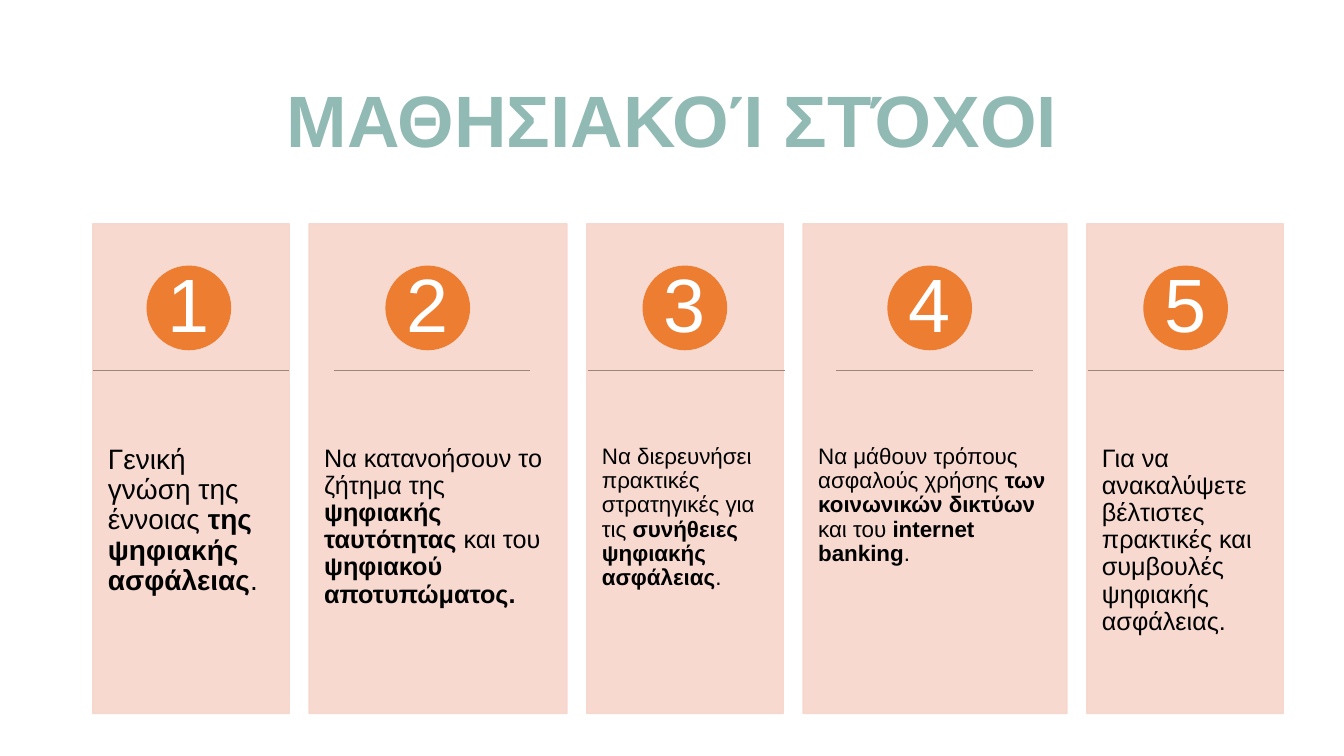
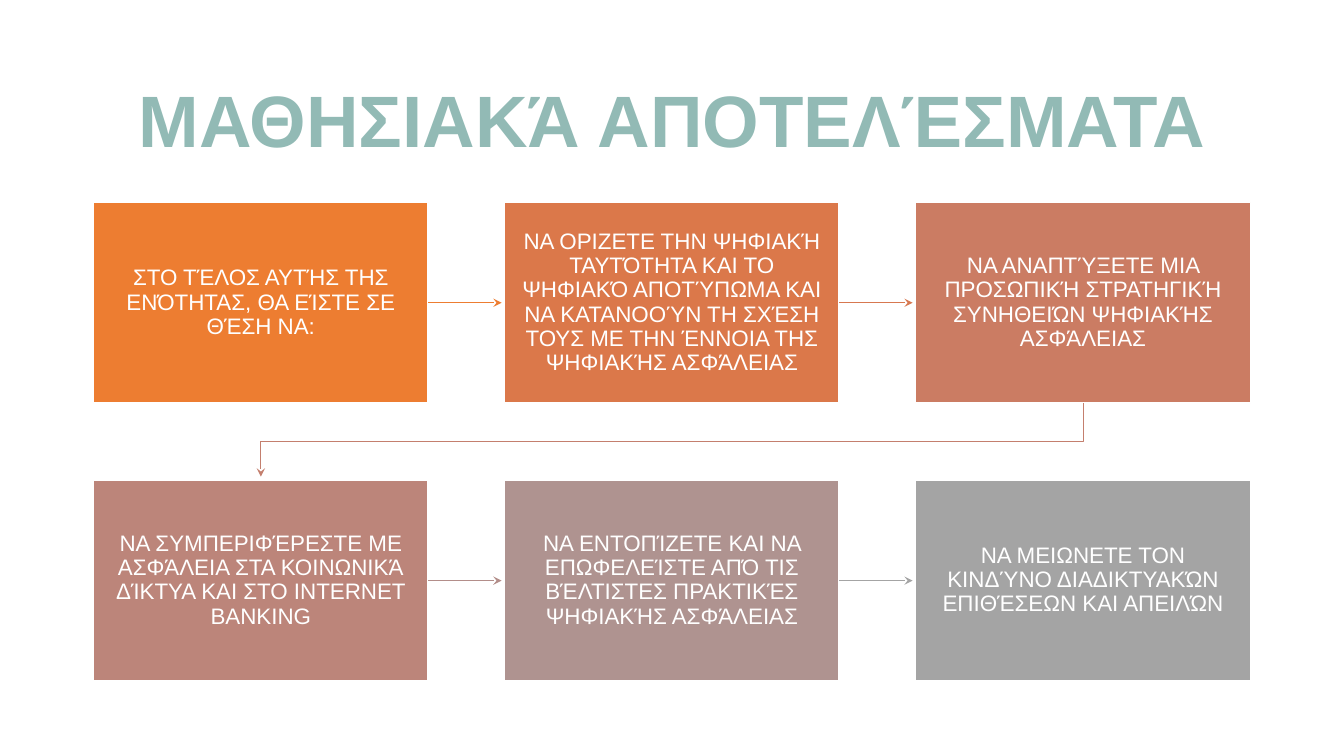
"""Build two slides: the learning objectives and the learning outcomes."""
from lxml.etree import SubElement
from pptx import Presentation
from pptx.dml.color import RGBColor
from pptx.enum.shapes import MSO_CONNECTOR, MSO_SHAPE
from pptx.enum.text import MSO_ANCHOR, MSO_AUTO_SIZE, PP_ALIGN
from pptx.oxml.ns import qn
from pptx.util import Cm, Pt

FONT = "Arial"
TEAL, ORANGE, PINK, RULE_GREY = "92BAB5", "ED7D31", "F7D5CB", "9C857C"
WHITE, BLACK = "FFFFFF", "000000"
color = RGBColor.from_string


def add_block(slide, kind, bounds, fill, outline, margins, size, text_color):
    """Add a filled shape and return it with its first paragraph, ready for text."""
    block = slide.shapes.add_shape(kind, *[Cm(length) for length in bounds])
    block.shadow.inherit = False
    block.fill.solid()
    block.fill.fore_color.rgb = color(fill)
    block.line.color.rgb = color(outline)
    block.line.width = Pt(1)
    frame = block.text_frame
    frame.word_wrap = True
    frame.vertical_anchor = MSO_ANCHOR.MIDDLE
    side, top, bottom = margins
    frame.margin_left = frame.margin_right = Cm(side)
    frame.margin_top, frame.margin_bottom = Cm(top), Cm(bottom)
    para = frame.paragraphs[0]
    para.alignment = PP_ALIGN.CENTER
    para.line_spacing = 0.9
    para.font.name = FONT
    para.font.size = Pt(size)
    para.font.color.rgb = color(text_color)
    return block, para


def style_line(line_shape, line_color, width, arrow=False):
    """Colour a line, remove its shadow and optionally give it an arrowhead."""
    line_shape.line.color.rgb = color(line_color)
    line_shape.line.width = Pt(width)
    properties = line_shape._element.spPr
    if arrow:
        SubElement(properties.find(qn("a:ln")), qn("a:tailEnd"), type="stealth")
    SubElement(properties, qn("a:effectLst"))


deck = Presentation()
deck.slide_width, deck.slide_height = Cm(33.87), Cm(19.05)
layout = deck.slide_layouts[5]
layout_title = layout.placeholders[0]
layout_title.left, layout_title.top = Cm(2.33), Cm(1.55)
layout_title.width, layout_title.height = Cm(29.21), Cm(3.15)

slides = []
for title in ("ΜΑΘΗΣΙΑΚΟΊ ΣΤΌΧΟΙ", "ΜΑΘΗΣΙΑΚΆ ΑΠΟΤΕΛΈΣΜΑΤΑ"):
    slide = deck.slides.add_slide(layout)
    slide.shapes.title.text = title
    frame = slide.shapes.title.text_frame
    frame.auto_size = MSO_AUTO_SIZE.NONE
    frame.vertical_anchor = MSO_ANCHOR.MIDDLE
    para = frame.paragraphs[0]
    para.alignment = PP_ALIGN.CENTER
    para.line_spacing = 0.9
    para.font.name = FONT
    para.font.size = Pt(52)
    para.font.bold = True
    para.font.color.rgb = color(TEAL)
    slides.append(slide)
objectives_slide, outcomes_slide = slides

# Each objective: card width, circle left, rule left, text size, then plain and bold runs in turn.
OBJECTIVES = [
    (4.95, 3.71, 2.34, 20,
     ["Γενική γνώση της έννοιας ", "της ψηφιακής ασφάλειας", "."]),
    (6.5, 9.73, 8.41, 18,
     ["Να κατανοήσουν το ζήτημα της ", "ψηφιακής ταυτότητας ", "και του ",
      "ψηφιακού αποτυπώματος."]),
    (4.95, 16.21, 14.83, 16,
     ["Να διερευνήσει πρακτικές στρατηγικές για τις ",
      "συνήθειες ψηφιακής ασφάλειας", "."]),
    (6.65, 22.38, 21.08, 16,
     ["Να μάθουν τρόπους ασφαλούς χρήσης ", "των κοινωνικών δικτύων ", "και του ",
      "internet banking", "."]),
    (4.95, 28.83, 27.41, 18,
     ["Για να ανακαλύψετε βέλτιστες πρακτικές και συμβουλές ψηφιακής ασφάλειας."]),
]
CARD_TOP, CARD_HEIGHT, CARD_GAP = 5.64, 12.34, 0.5
CIRCLE_TOP, CIRCLE_SIZE = 6.71, 2.1
RULE_TOP, RULE_LENGTH = 9.32, 4.95

card_left = 2.34
for number, (width, circle_left, rule_left, size, texts) in enumerate(OBJECTIVES, 1):
    card, para = add_block(objectives_slide, MSO_SHAPE.RECTANGLE,
                           (card_left, CARD_TOP, width, CARD_HEIGHT),
                           PINK, PINK, (0.38, 5.58, 0.9), size, BLACK)
    for tint in card._element.spPr.iter(qn("a:srgbClr")):
        SubElement(tint, qn("a:alpha"), val="90000")
    card.text_frame.vertical_anchor = MSO_ANCHOR.TOP
    para.alignment = PP_ALIGN.LEFT
    for index, text in enumerate(texts):
        span = para.add_run()
        span.text = text
        span.font.bold = index % 2 == 1

    circle, para = add_block(objectives_slide, MSO_SHAPE.OVAL,
                             (circle_left, CIRCLE_TOP, CIRCLE_SIZE, CIRCLE_SIZE),
                             ORANGE, ORANGE, (0, 0, 0), 54, WHITE)
    para.text = str(number)

    rule = objectives_slide.shapes.add_connector(
        MSO_CONNECTOR.STRAIGHT, Cm(rule_left), Cm(RULE_TOP),
        Cm(rule_left + RULE_LENGTH), Cm(RULE_TOP))
    style_line(rule, RULE_GREY, 0.5)
    card_left += width + CARD_GAP

# Each outcome: box colour, colour of the arrow that leaves it, text.
OUTCOMES = [
    (ORANGE, ORANGE, "ΣΤΟ ΤΈΛΟΣ ΑΥΤΉΣ ΤΗΣ ΕΝΌΤΗΤΑΣ, ΘΑ ΕΊΣΤΕ ΣΕ ΘΈΣΗ ΝΑ:"),
    ("DB784A", "D77850",
     "ΝΑ ΟΡΙΖΕΤΕ ΤΗΝ ΨΗΦΙΑΚΉ ΤΑΥΤΌΤΗΤΑ ΚΑΙ ΤΟ ΨΗΦΙΑΚΌ ΑΠΟΤΎΠΩΜΑ ΚΑΙ ΝΑ ΚΑΤΑΝΟΟΎΝ "
     "ΤΗ ΣΧΈΣΗ ΤΟΥΣ ΜΕ ΤΗΝ ΈΝΝΟΙΑ ΤΗΣ ΨΗΦΙΑΚΉΣ ΑΣΦΆΛΕΙΑΣ"),
    ("CB7C63", "C47F6E",
     "ΝΑ ΑΝΑΠΤΎΞΕΤΕ ΜΙΑ ΠΡΟΣΩΠΙΚΉ ΣΤΡΑΤΗΓΙΚΉ ΣΥΝΗΘΕΙΏΝ ΨΗΦΙΑΚΉΣ ΑΣΦΆΛΕΙΑΣ"),
    ("BC857A", "B38E8A",
     "ΝΑ ΣΥΜΠΕΡΙΦΈΡΕΣΤΕ ΜΕ ΑΣΦΆΛΕΙΑ ΣΤΑ ΚΟΙΝΩΝΙΚΆ ΔΊΚΤΥΑ ΚΑΙ ΣΤΟ INTERNET BANKING"),
    ("AF9390", "A4A4A4",
     "ΝΑ ΕΝΤΟΠΊΖΕΤΕ ΚΑΙ ΝΑ ΕΠΩΦΕΛΕΊΣΤΕ ΑΠΌ ΤΙΣ ΒΈΛΤΙΣΤΕΣ ΠΡΑΚΤΙΚΈΣ ΨΗΦΙΑΚΉΣ ΑΣΦΆΛΕΙΑΣ"),
    ("A4A4A4", None, "ΝΑ ΜΕΙΩΝΕΤΕ ΤΟΝ ΚΙΝΔΎΝΟ ΔΙΑΔΙΚΤΥΑΚΏΝ ΕΠΙΘΈΣΕΩΝ ΚΑΙ ΑΠΕΙΛΏΝ"),
]
COLUMNS = 3
BOX_LEFT, BOX_TOP, BOX_WIDTH, BOX_HEIGHT = 2.36, 5.1, 8.43, 5.06
COLUMN_STEP, ROW_STEP, ARROW_LENGTH = 10.36, 7, 1.85

for index, (fill, arrow_color, text) in enumerate(OUTCOMES):
    row, column = divmod(index, COLUMNS)
    left, top = BOX_LEFT + column * COLUMN_STEP, BOX_TOP + row * ROW_STEP
    box, para = add_block(outcomes_slide, MSO_SHAPE.RECTANGLE,
                          (left, top, BOX_WIDTH, BOX_HEIGHT),
                          fill, WHITE, (0.41, 0.43, 0.43), 16, WHITE)
    para.text = text
    if arrow_color is None:
        continue
    right, bottom = left + BOX_WIDTH, top + BOX_HEIGHT
    if column < COLUMNS - 1:
        middle = top + BOX_HEIGHT / 2
        arrow = outcomes_slide.shapes.add_connector(
            MSO_CONNECTOR.STRAIGHT, Cm(right), Cm(middle),
            Cm(right + ARROW_LENGTH), Cm(middle))
    else:
        start, end = left + BOX_WIDTH / 2, BOX_LEFT + BOX_WIDTH / 2
        bend = bottom + (ROW_STEP - BOX_HEIGHT) / 2
        builder = outcomes_slide.shapes.build_freeform(Cm(start), Cm(bottom))
        builder.add_line_segments(
            [(Cm(start), Cm(bend)), (Cm(end), Cm(bend)),
             (Cm(end), Cm(bottom + ARROW_LENGTH))], close=False)
        arrow = builder.convert_to_shape()
        arrow.fill.background()
    style_line(arrow, arrow_color, 0.75, arrow=True)

deck.save("out.pptx")
